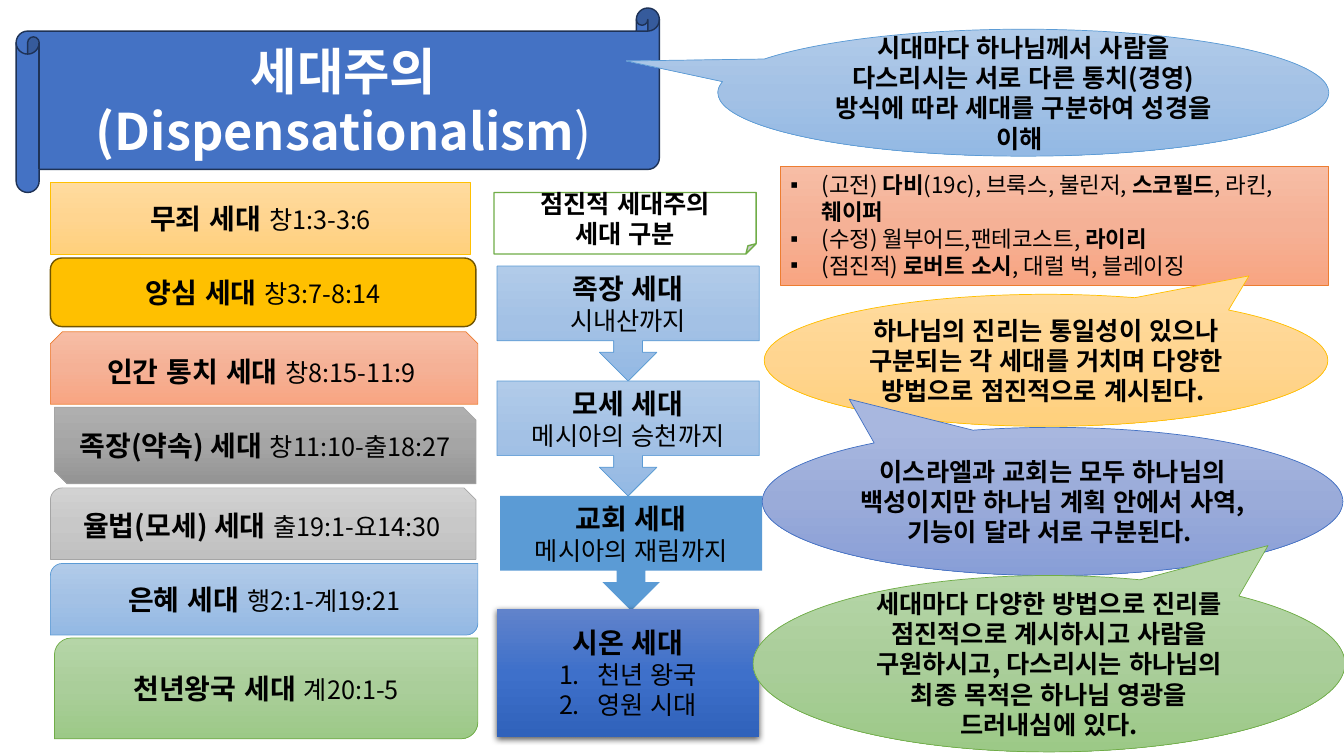
from copy import deepcopy

from lxml import etree
from pptx import Presentation
from pptx.dml.color import RGBColor
from pptx.enum import lang, shapes, text
from pptx.oxml.ns import qn
from pptx.util import Pt

PX = 9144  # EMU per px, 100 px to the inch
FONT = "Noto Sans CJK KR"
KIND = shapes.MSO_SHAPE
COLORS = {
    "black": "000000", "white": "FFFFFF", "royal": "4472C4", "navy": "1E3256",
    "sky": "5B9BD5", "gold": "FFC000", "brown": "705400", "orange": "ED7D31",
    "gray": "A5A5A5", "green": "70AD47",
}
GRADIENTS = {
    "sky": ("B1CBE9", "A3C1E5", "93B9E4"),
    "gold": ("FFDB9E", "FFD590", "FFD07C"),
    "orange": ("F7BDA5", "F5B196", "F8A582"),
    "dark gray": ("AFAFAF", "A5A5A5", "939393"),
    "light gray": ("D2D2D2", "C8C8C8", "C0C0C0"),
    "green": ("B5D5A7", "AACE9A", "9CC987"),
    "lavender": ("A8B7DF", "9AABD9", "889ED7"),
    "royal": ("6183CB", "3E70CA", "3062BB"),
}


def rgb(name):
    return RGBColor.from_string(COLORS[name])


def add_child(parent, tag, **attributes):
    return etree.SubElement(parent, qn(tag), attributes)


def paint_gradient(shape, name):
    """Fill a shape from top to bottom with three even stops."""
    shape.fill.gradient()
    shape.fill.gradient_angle = 270
    first = shape._element.spPr.find(".//" + qn("a:gs"))
    first.addnext(deepcopy(first))
    for index, (stop, color) in enumerate(zip(shape.fill.gradient_stops, GRADIENTS[name])):
        stop.position = index / 2
        stop.color.rgb = RGBColor.from_string(color)


def add_box(page, kind, box, solid=None, gradient=None, line=None, width=0.5):
    shape = page.shapes.add_shape(kind, *(side * PX for side in box))
    shape.shadow.inherit = False
    if gradient:
        paint_gradient(shape, gradient)
    else:
        shape.fill.solid()
        shape.fill.fore_color.rgb = rgb(solid)
    if line:
        shape.line.color.rgb = rgb(line)
        shape.line.width = Pt(width)
    else:
        shape.line.fill.background()
    shape.text_frame.vertical_anchor = text.MSO_ANCHOR.MIDDLE
    return shape


def write(shape, paras, color="black", align=text.PP_ALIGN.CENTER):
    """Write paragraphs, each a list of (words, size, bold) spans."""
    frame = shape.text_frame
    frame.word_wrap = True
    for index, spans in enumerate(paras):
        para = frame.paragraphs[0] if index == 0 else frame.add_paragraph()
        para.alignment = align
        for words, size, bold in spans:
            span = para.add_run()
            span.text = words
            formats = {"size": Pt(size), "bold": bold, "name": FONT,
                       "language_id": lang.MSO_LANGUAGE_ID.KOREAN}
            for key, value in formats.items():
                setattr(span.font, key, value)
            span.font.color.rgb = rgb(color)
            add_child(span.font._element, "a:ea", typeface=FONT)


def add_bullet(para, indent, tag, **attributes):
    properties = para._p.get_or_add_pPr()
    properties.set("marL", str(indent * PX))
    properties.set("indent", str(-indent * PX))
    if tag == "a:buChar":
        add_child(properties, "a:buFont", typeface="Arial")
    add_child(properties, tag, **attributes)


def add_title(page, box):
    scroll = add_box(page, KIND.HORIZONTAL_SCROLL, box, solid="royal", line="navy", width=1)
    write(scroll, [[("세대주의(Dispensationalism", 36, True), (")", 36, False)]], "white")


def add_seven_ages(page, box):
    left, top, width, _ = box
    # kind, left inset, top, right inset, height, paint, line, age, verses
    ages = [
        (KIND.RECTANGLE, 0, 0, 7, 71, "gold", "gold", "무죄 세대 ", "창1:3-3:6"),
        (KIND.ROUNDED_RECTANGLE, 0, 75, 2, 68, None, "brown", "양심 세대 ", "창3:7-8:14"),
        (KIND.SNIP_2_SAME_RECTANGLE, 0, 148, 0, 72, "orange", "orange",
         "인간 통치 세대 ", "창8:15-11:9 "),
        (KIND.SNIP_2_DIAG_RECTANGLE, 4, 223, 2, 76, "dark gray", "gray",
         "족장(약속) 세대 ", "창11:10-출18:27"),
        (KIND.SNIP_ROUND_RECTANGLE, 0, 303, 2, 71, "light gray", "gray",
         "율법(모세) 세대 ", "출19:1-요14:30"),
        (KIND.ROUND_2_DIAG_RECTANGLE, 0, 378, 0, 71, "sky", "sky", "은혜 세대 ", "행2:1-계19:21"),
        (KIND.ROUND_2_DIAG_RECTANGLE, 4, 452, 0, 100, "green", "green",
         "천년왕국 세대 ", "계20:1-5"),
    ]
    for kind, inset, drop, trim, height, paint, line, age, verses in ages:
        place = (left + inset, top + drop, width - inset - trim, height)
        shape = add_box(page, kind, place, "gold", paint, line, 0.5 if paint else 1)
        write(shape, [[(age, 20, True), (verses, 18, False)]])


def add_progressive_ages(page, box):
    left, top, width, height = box
    # Three steps pointing down
    steps = [
        (3, "sky", "족장 세대", "시내산까지"),
        (3, "sky", "모세 세대", "메시아의 승천까지"),
        (6, None, "교회 세대", "메시아의 재림까지"),
    ]
    for index, (inset, paint, age, span) in enumerate(steps):
        place = (left + inset, top + 73 + 114 * index, width, 114)
        step = add_box(page, KIND.DOWN_ARROW_CALLOUT, place, "sky", paint, paint)
        write(step, [[(age, 20, True)], [(span, 18, False)]])

    # Final age with its numbered parts
    place = (left + 3, top + 413, width, height - 413)
    zion = add_box(page, KIND.RECTANGLE, place, gradient="royal")
    write(zion, [[("시온 세대", 20, True)], [("천년 왕국", 18, False)], [("영원 시대", 18, False)]])
    for para in zion.text_frame.paragraphs[1:]:
        add_bullet(para, 38, "a:buAutoNum", type="arabicPeriod")
    effects = zion._element.spPr.find(qn("a:effectLst"))
    shadow = add_child(effects, "a:outerShdw", blurRad=str(Pt(4.5)), dist=str(Pt(1.5)),
                       dir="5400000", algn="ctr", rotWithShape="0")
    shade = add_child(shadow, "a:srgbClr", val=COLORS["black"])
    add_child(shade, "a:alpha", val="63000")

    # Heading note
    note = add_box(page, KIND.FOLDED_CORNER, (left, top, width, 61), "white", line="green", width=1)
    write(note, [[("점진적 세대주의", 18, True)], [("세대 구분", 18, True)]])


def add_teachers(page, box):
    panel = add_box(page, KIND.RECTANGLE, box, gradient="orange", line="orange")
    panel.text_frame.vertical_anchor = text.MSO_ANCHOR.TOP
    panel.text_frame.auto_size = text.MSO_AUTO_SIZE.SHAPE_TO_FIT_TEXT
    # Spans alternate between plain and bold
    groups = [
        ("(고전) ", "다비", "(19c), 브룩스, 불린저, ", "스코필드", ", 라킨, ", "췌이퍼"),
        ("(수정) 월부어드,팬테코스트, ", "라이리"),
        ("(점진적) ", "로버트 소시", ", 대럴 벅, 블레이징"),
    ]
    paras = [[(words, 16, index % 2 == 1) for index, words in enumerate(group)]
             for group in groups]
    write(panel, paras, align=text.PP_ALIGN.LEFT)
    for para in panel.text_frame.paragraphs:
        add_bullet(para, 31, "a:buChar", char="▪")


def add_callout(page, box, tip, paint, line, words):
    bubble = add_box(page, KIND.OVAL_CALLOUT, box, gradient=paint, line=line)
    for index, value in enumerate(tip):
        bubble.adjustments[index] = value
    write(bubble, [[(words, 18, True)]])


def main():
    deck = Presentation()
    deck.slide_width, deck.slide_height = 1333 * PX, 750 * PX
    page = deck.slides.add_slide(deck.slide_layouts[6])

    add_title(page, (16, 8, 638, 183))
    add_callout(page, (712, 29, 606, 126), (-0.65, -0.25), "sky", "sky",
                "시대마다 하나님께서 사람을 다스리시는 서로 다른 통치(경영) 방식에 따라 "
                "세대를 구분하여 성경을 이해 ")
    add_seven_ages(page, (50, 181, 424, 552))
    add_progressive_ages(page, (490, 191, 260, 540))
    add_teachers(page, (774, 165, 544, 118))
    add_callout(page, (758, 292, 559, 131), (0.36, -0.64), "gold", "gold",
                "하나님의 진리는 통일성이 있으나 구분되는 각 세대를 거치며 다양한 "
                "방법으로 점진적으로 계시된다. ")
    add_callout(page, (756, 424, 576, 147), (-0.35, -0.69), "lavender", "royal",
                "이스라엘과 교회는 모두 하나님의 백성이지만 하나님 계획 안에서 사역, "
                "기능이 달라 서로 구분된다. ")
    add_callout(page, (747, 571, 587, 175), (0.37, -0.67), "green", "green",
                "세대마다 다양한 방법으로 진리를 점진적으로 계시하시고 사람을 구원하시고, "
                "다스리시는 하나님의 최종 목적은 하나님 영광을 드러내심에 있다.")
    deck.save("out.pptx")


if __name__ == "__main__":
    main()
